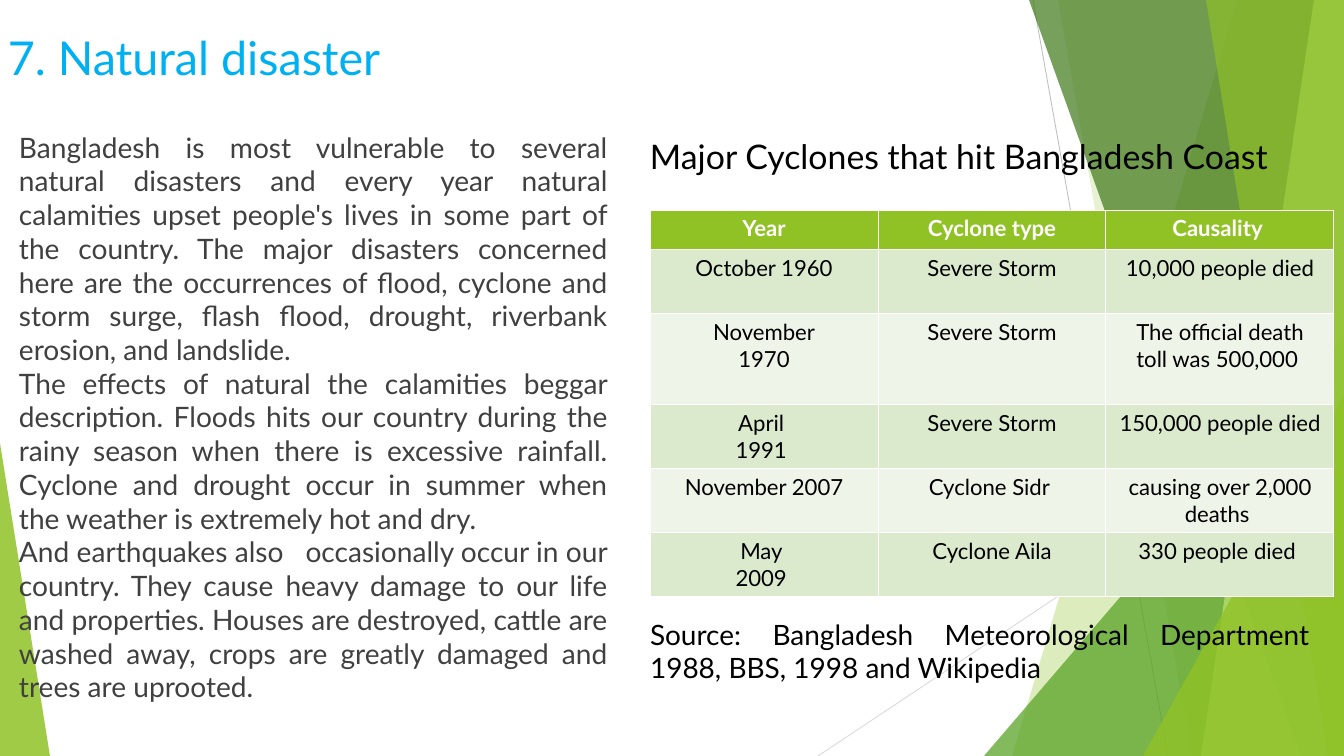
from lxml.etree import SubElement
from pptx import Presentation
from pptx.dml.color import RGBColor
from pptx.enum.shapes import MSO_CONNECTOR, MSO_SHAPE
from pptx.enum.text import MSO_ANCHOR, PP_ALIGN
from pptx.oxml.ns import qn
from pptx.util import Emu, Pt

SCALE = 914400 / 84
FONT = "Lato"
COLORS = {
    "white": "FFFFFF",
    "black": "000000",
    "title": "00B0F0",
    "body": "404040",
    "lime": "90C226",
    "pale lime": "C0E474",
    "green": "54A021",
    "dark green": "3F7819",
    "band dark": "DBE9CD",
    "band light": "EEF4E8",
    "grey": "BFBFBF",
    "light grey": "D9D9D9",
}

LINES = [
    ((1033, 0), (1168, 756), "grey"),
    ((1344, 406), (818, 756), "light grey"),
]
# Each band reaches the right edge: top left x, bottom left x, colour, opacity
BACK_BANDS = [(1237, 1012, "lime", 30), (1058, 1192, "lime", 20)]
FRONT_BANDS = [
    (1029, 1301, "dark green", 70),
    (1314, 1201, "pale lime", 70),
    (1206, 1328, "lime", 65),
]

BODY = [
    "Bangladesh is most vulnerable to several natural disasters and every year "
    "natural calamities upset people's lives in some part of the country. The "
    "major disasters concerned here are the occurrences of flood, cyclone and "
    "storm surge, flash flood, drought, riverbank erosion, and landslide.",
    "The effects of natural the calamities beggar description. Floods hits our "
    "country during the rainy season when there is excessive rainfall. Cyclone "
    "and drought occur in summer when the weather is extremely hot and dry.",
    "And earthquakes also   occasionally occur in our country. They cause heavy "
    "damage to our life and properties. Houses are destroyed, cattle are washed "
    "away, crops are greatly damaged and trees are uprooted.",
]

CYCLONES = [
    ("Year", "Cyclone type", "Causality "),
    ("October 1960", "Severe Storm", "10,000 people died"),
    ("November\n1970", "Severe Storm", "The official death toll was 500,000 "),
    ("April \n1991 ", "Severe Storm", "150,000 people died "),
    ("November 2007", "Cyclone Sidr ", "causing over 2,000 deaths "),
    ("May \n2009 ", "Cyclone Aila", "330 people died "),
]
ROW_HEIGHTS = [40, 64, 91, 64, 64, 64]
COLUMN_WIDTH = 228


def px(length):
    return Emu(round(length * SCALE))


def rgb(name):
    return RGBColor.from_string(COLORS[name])


def add_line(page, start, end, color):
    line = page.shapes.add_connector(
        MSO_CONNECTOR.STRAIGHT, *[px(value) for value in start + end])
    line.line.color.rgb = rgb(color)
    line.line.width = Pt(0.75)
    SubElement(line._element.spPr, qn("a:effectLst"))


def paint(shape, color, opacity):
    """Give a shape a see-through fill, with no outline and no shadow."""
    shape.shadow.inherit = False
    shape.line.fill.background()
    shape.fill.solid()
    shape.fill.fore_color.rgb = rgb(color)
    color_element = shape._element.spPr.find(qn("a:solidFill"))[0]
    SubElement(color_element, qn("a:alpha"), val=str(opacity * 1000))


def add_band(page, top_x, bottom_x, color, opacity):
    builder = page.shapes.build_freeform(top_x, 0, scale=SCALE)
    builder.add_line_segments([(1344, 0), (1344, 756), (bottom_x, 756)])
    paint(builder.convert_to_shape(), color, opacity)


def add_triangle(page, left, top, width, apex, color, opacity):
    """Stand a triangle on the bottom edge; apex is 0 for left, 1 for right."""
    shape = page.shapes.add_shape(
        MSO_SHAPE.ISOSCELES_TRIANGLE, px(left), px(top), px(width), px(756 - top))
    shape.adjustments[0] = apex
    paint(shape, color, opacity)


def write(frame, paragraphs, size, color, align, bold=False):
    frame.word_wrap = True
    frame.text = "\n".join(paragraphs)
    for para in frame.paragraphs:
        para.alignment = align
        para.font.name = FONT
        para.font.size = Pt(size)
        para.font.bold = bold
        para.font.color.rgb = rgb(color)


def add_text(page, bounds, paragraphs, size, color, align,
             anchor=MSO_ANCHOR.TOP, inset=(8, 4)):
    box = page.shapes.add_textbox(*[px(value) for value in bounds])
    frame = box.text_frame
    frame.margin_left = frame.margin_right = px(inset[0])
    frame.margin_top = frame.margin_bottom = px(inset[1])
    frame.vertical_anchor = anchor
    write(frame, paragraphs, size, color, align)


def add_cyclone_table(page):
    columns = len(CYCLONES[0])
    table = page.shapes.add_table(
        len(CYCLONES), columns, px(650), px(210),
        px(COLUMN_WIDTH * columns), px(sum(ROW_HEIGHTS))).table
    for column in table.columns:
        column.width = px(COLUMN_WIDTH)
    for i, (row, height) in enumerate(zip(CYCLONES, ROW_HEIGHTS)):
        table.rows[i].height = px(height)
        header = i == 0
        band = "lime" if header else "band dark" if i % 2 else "band light"
        for j, text in enumerate(row):
            cell = table.cell(i, j)
            cell.margin_left = cell.margin_right = px(13)
            cell.margin_top = cell.margin_bottom = px(5)
            cell.fill.solid()
            cell.fill.fore_color.rgb = rgb(band)
            write(cell.text_frame, text.split("\n"), 19,
                  "white" if header else "black", PP_ALIGN.CENTER, header)


def add_decoration(page):
    for line in LINES:
        add_line(page, *line)
    for band in BACK_BANDS:
        add_band(page, *band)
    add_triangle(page, 984, 336, 360, 1, "green", 72)
    for band in FRONT_BANDS:
        add_band(page, *band)
    add_triangle(page, 1143, 396, 201, 1, "lime", 80)
    add_triangle(page, 0, 443, 50, 0, "lime", 85)


def main():
    deck = Presentation()
    deck.slide_width, deck.slide_height = px(1344), px(756)
    page = deck.slides.add_slide(deck.slide_layouts[6])
    add_decoration(page)
    add_text(page, (0, 25, 1142, 76), ["7. Natural disaster"],
             40, "title", PP_ALIGN.LEFT)
    add_text(page, (11, 126, 605, 617), BODY, 24.1, "body", PP_ALIGN.JUSTIFY)
    add_cyclone_table(page)
    add_text(page, (616, 118, 695, 76),
             ["Major Cyclones that hit Bangladesh Coast "],
             29, "black", PP_ALIGN.CENTER, MSO_ANCHOR.MIDDLE, (12, 6))
    add_text(page, (638, 613, 683, 76),
             ["Source: Bangladesh Meteorological Department 1988, BBS, 1998 "
              "and Wikipedia"],
             24, "black", PP_ALIGN.JUSTIFY, MSO_ANCHOR.MIDDLE, (12, 6))
    deck.save("out.pptx")


if __name__ == "__main__":
    main()
